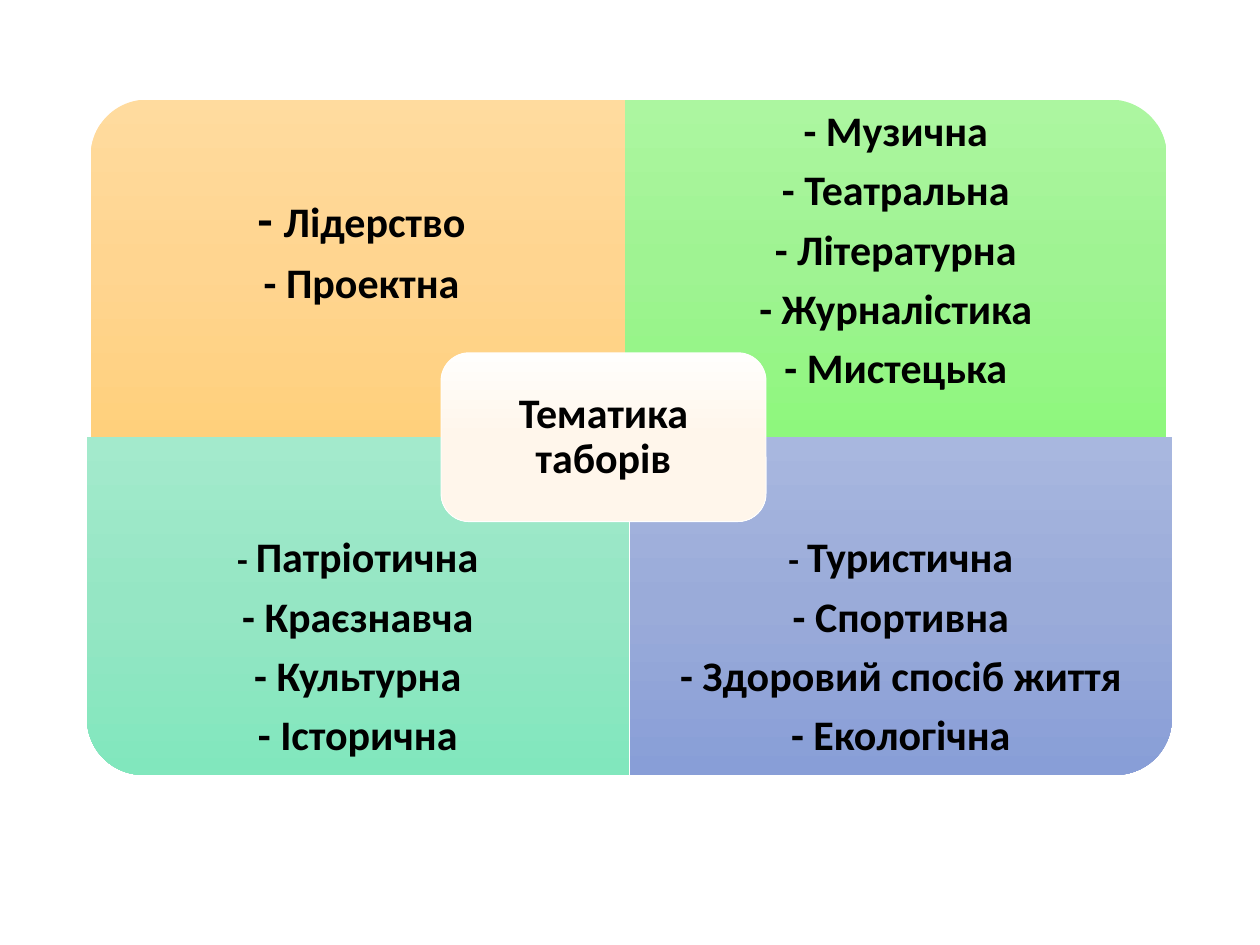
from copy import deepcopy
from dataclasses import dataclass

from pptx import Presentation, util as u
from pptx.dml.color import RGBColor
from pptx.enum import shapes, text
from pptx.oxml.ns import qn

COLORS = {
    "orange": ("FFDB9E", "FFD590", "FFD07C"),
    "green": ("ACF6A0", "9FF392", "8EF77D"),
    "mint": ("A3EACC", "95E6C4", "81E7BD"),
    "blue": ("A8B7DF", "9AABD9", "889ED7"),
    "cream": ("FFFEFC", "FFF6EB", "FFF5E9"),
    "white": "FFFFFF",
    "black": "000000",
}
COL, ROW = 4.3, 2.68     # size of one quarter
TOP = 0.79
MID = TOP + ROW
BAND = 0.75              # share of a quarter that holds its text
PAD = 0.16
SIZE = 24


@dataclass
class Panel:
    left: float
    row: int
    turn: int
    tint: str
    dash: int            # size of the first dash
    drop: float          # extra space above the text
    topics: tuple[str, ...]


PANELS = (
    Panel(0.72, 0, 270, "orange", 28, 0.4, ("Лідерство", "Проектна")),
    Panel(4.96, 0, 0, "green", 24, 0.4,
          ("Музична", "Театральна", "Літературна", "Журналістика", "Мистецька")),
    Panel(0.69, 1, 180, "mint", 20, 0,
          ("Патріотична", "Краєзнавча", "Культурна", "Історична")),
    Panel(5, 1, 90, "blue", 20, 0,
          ("Туристична", "Спортивна", "Здоровий спосіб життя", "Екологічна")),
)


def shade(shape, tint: str) -> None:
    """Fill with a three-stop gradient that runs down the slide."""
    shape.shadow.inherit = False
    shape.fill.gradient()
    shape.fill.gradient_angle = 270
    grad = shape._element.spPr.find(qn("a:gradFill"))
    grad.set("rotWithShape", "0")
    stops = grad.find(qn("a:gsLst"))
    stops.insert(1, deepcopy(stops[0]))
    for i, (stop, color) in enumerate(zip(shape.fill.gradient_stops, COLORS[tint])):
        stop.position = i / 2
        stop.color.rgb = RGBColor.from_string(color)


def write(slide, box: tuple[float, ...], lines: list[tuple], pad: float,
          drop: float = 0) -> None:
    """Add centred lines, each a sequence of (words, size) runs."""
    frame = slide.shapes.add_textbox(*map(u.Inches, box)).text_frame
    frame.word_wrap = True
    frame.vertical_anchor = text.MSO_ANCHOR.MIDDLE
    frame.margin_left = frame.margin_right = frame.margin_bottom = u.Inches(pad)
    frame.margin_top = u.Inches(pad + drop)
    for i, line in enumerate(lines):
        para = frame.add_paragraph() if i else frame.paragraphs[0]
        para.alignment = text.PP_ALIGN.CENTER
        para.line_spacing = 0.9
        para.space_after = u.Pt(8)
        for words, size in line:
            run = para.add_run()
            run.text = words
            run.font.name = "Calibri"
            run.font.size = u.Pt(size)
            run.font.bold = True
            run.font.color.rgb = RGBColor.from_string(COLORS["black"])


def draw(slide, panel: Panel) -> None:
    top = TOP + panel.row * ROW
    wide, high = (ROW, COL) if panel.turn % 180 else (COL, ROW)
    box = (panel.left + (COL - wide) / 2, top + (ROW - high) / 2, wide, high)
    shape = slide.shapes.add_shape(
        shapes.MSO_SHAPE.ROUND_1_RECTANGLE, *map(u.Inches, box))
    shape.rotation = panel.turn
    shade(shape, panel.tint)
    shape.line.fill.background()

    first, *rest = panel.topics
    lines = [(("- ", panel.dash), (first, SIZE))]
    lines += [((f"- {topic}", SIZE),) for topic in rest]
    start = top + panel.row * ROW * (1 - BAND)
    write(slide, (panel.left, start, COL, ROW * BAND), lines, PAD, panel.drop)


def label(slide) -> None:
    left, wide, high = 3.5, COL * 0.6, ROW / 2
    top = MID - high / 2
    shape = slide.shapes.add_shape(
        shapes.MSO_SHAPE.ROUNDED_RECTANGLE, *map(u.Inches, (left, top, wide, high)))
    shade(shape, "cream")
    shape.line.color.rgb = RGBColor.from_string(COLORS["white"])
    shape.line.width = u.Pt(0.5)
    gap = 0.07
    box = (left + gap, top + gap, wide - 2 * gap, high - 2 * gap)
    write(slide, box, [(("Тематика таборів", SIZE),)], 0.1)


def main() -> None:
    deck = Presentation()
    deck.slide_width, deck.slide_height = u.Inches(10), u.Inches(7.5)
    slide = deck.slides.add_slide(deck.slide_layouts[6])
    for panel in PANELS:
        draw(slide, panel)
    label(slide)
    deck.save("out.pptx")


if __name__ == "__main__":
    main()
